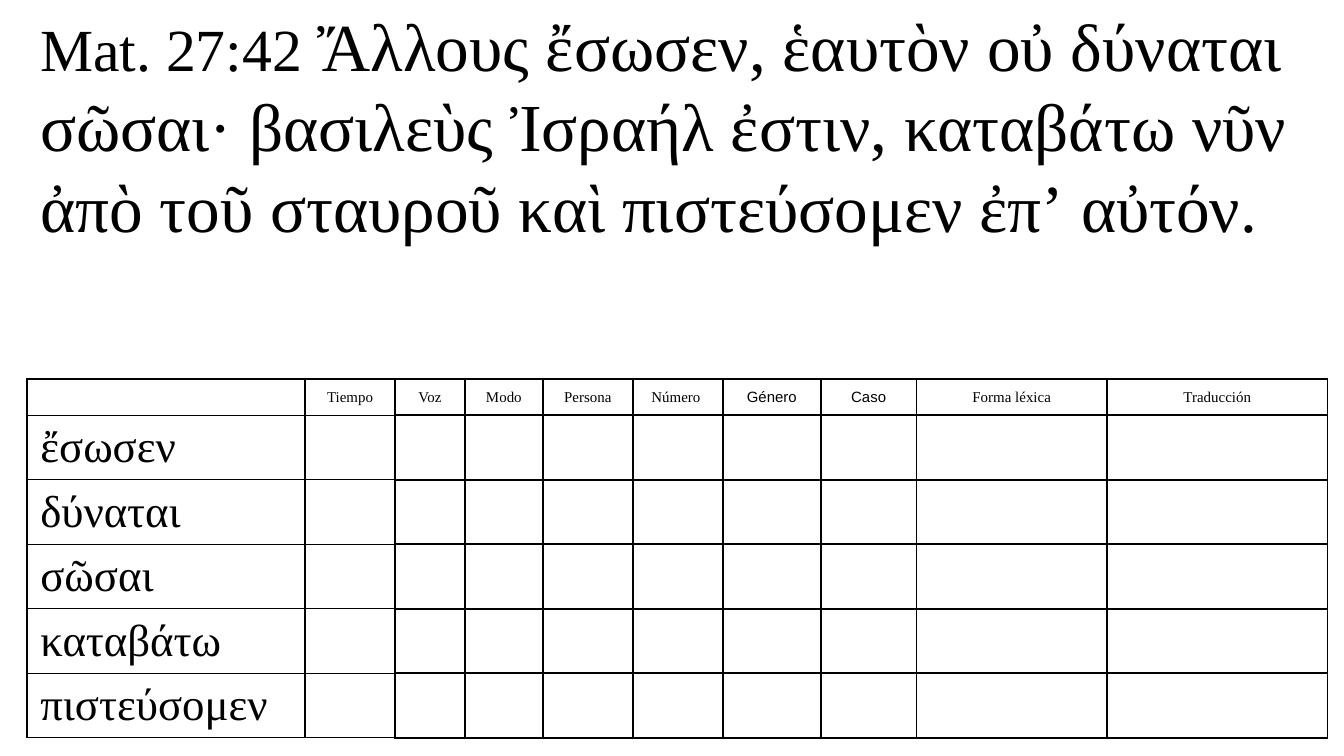
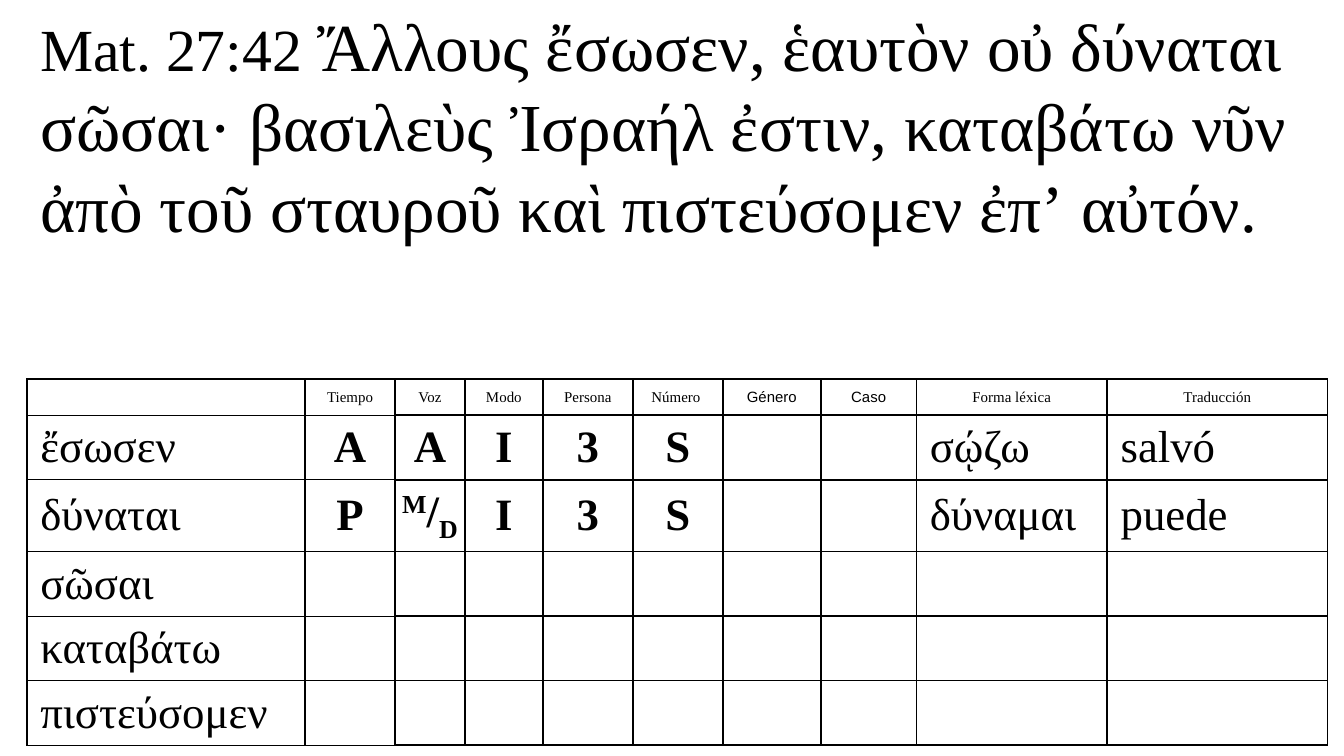
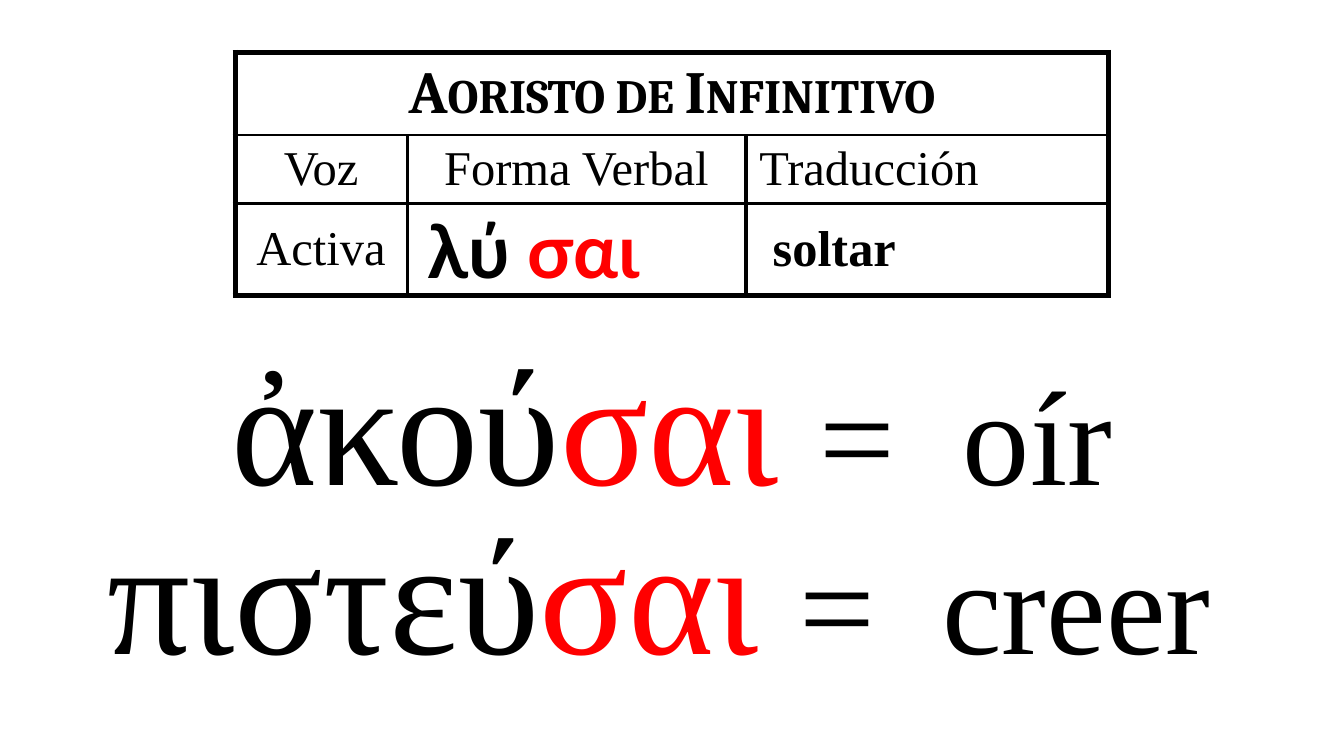
import lxml.etree
import pptx
import pptx.dml.color
import pptx.enum.text
import pptx.oxml.ns
import pptx.util

SCALE = 9144
BLACK, RED = "000000", "FF0000"
SERIF = "Times New Roman"
MID = pptx.enum.text.PP_ALIGN.CENTER
BOTH = pptx.enum.text.PP_ALIGN.JUSTIFY

VERSE = ("Ἄλλους ἔσωσεν, ἑαυτὸν οὐ δύναται σῶσαι· βασιλεὺς Ἰσραήλ ἐστιν, "
         "καταβάτω νῦν ἀπὸ τοῦ σταυροῦ καὶ πιστεύσομεν ἐπʼ αὐτόν.")
HEADS = ["Tiempo", "Voz", "Modo", "Persona", "Número ",
         "Género", "Caso", "Forma léxica", "Traducción"]
VERBS = {"ἔσωσεν": 20, "δύναται": 50, "σῶσαι": 20, "καταβάτω": 20, "πιστεύσομεν": 20}
SPLIT = [("M", {"base": 30}), ("/", {}), ("D", {"base": -25})]
KEY = {
    "ἔσωσεν": ["A", "A", "I", "3", "S", None, None, "σῴζω", "salvó"],
    "δύναται": ["P", SPLIT, "I", "3", "S", None, None, "δύναμαι", "puede"],
}


def px(count):
    return pptx.util.Emu(count * SCALE)


def hue(code):
    return pptx.dml.color.RGBColor.from_string(code)


def tag(parent, name, **attrs):
    return lxml.etree.SubElement(parent, pptx.oxml.ns.qn(name), attrs)


def write(frame, text, align=None, before=0, indent=None, **base):
    par = frame.paragraphs[0]
    props = par._p.get_or_add_pPr()
    if align is not None:
        par.alignment = align
    if indent:
        props.set("marL", str(px(indent[0])))
        props.set("indent", str(px(indent[1])))
    if before:
        tag(tag(props, "a:spcBef"), "a:spcPct", val=str(before * 1000))
    for part, extra in [(text, {})] if isinstance(text, str) else text:
        look = {"size": 24, "face": SERIF, "color": BLACK, "bold": False, **base, **extra}
        run = par.add_run()
        run.text = part
        run.font.size = pptx.util.Pt(look["size"])
        run.font.name = look["face"]
        run.font.bold = look["bold"]
        run.font.color.rgb = hue(look["color"])
        if "base" in look:
            run._r.get_or_add_rPr().set("baseline", str(look["base"] * 1000))
        if look.get("small"):
            run._r.get_or_add_rPr().set("cap", "small")


class Deck:
    def __init__(self, wide):
        self.show = pptx.Presentation()
        self.show.slide_width = px(wide)
        self.show.slide_height = px(wide) * 9 // 16
        self.slide = None

    def page(self):
        self.slide = self.show.slides.add_slide(self.show.slide_layouts[6])

    def box(self, place, text, **look):
        frame = self.slide.shapes.add_textbox(*map(px, place)).text_frame
        frame.word_wrap = True
        frame.auto_size = pptx.enum.text.MSO_AUTO_SIZE.SHAPE_TO_FIT_TEXT
        write(frame, text, **look)

    def cell(self, cell, text, pad=(10, 4), **look):
        cell.margin_left = cell.margin_right = px(pad[0])
        cell.margin_top = cell.margin_bottom = px(pad[1])
        cell.vertical_anchor = pptx.enum.text.MSO_ANCHOR.MIDDLE
        if text:
            write(cell.text_frame, text, **look)
        else:
            tag(cell.text_frame.paragraphs[0]._p, "a:endParaRPr", sz="800")

    def rule(self, cell, widths):
        props = cell._tc.get_or_add_tcPr()
        for side, width in zip("LRTB", widths):
            line = tag(props, "a:ln" + side, w=str(pptx.util.Pt(width)))
            tag(tag(line, "a:solidFill"), "a:srgbClr", val=BLACK)
        cell.fill.background()

    def table(self, left, top, cols, rows, cells, edges):
        place = map(px, (left, top, sum(cols), sum(rows)))
        table = self.slide.shapes.add_table(len(rows), len(cols), *place).table
        table.first_row = table.horz_banding = False
        for col, width in zip(table.columns, cols):
            col.width = px(width)
        for y, (height, line) in enumerate(zip(rows, cells)):
            table.rows[y].height = px(height)
            for x, (text, look) in enumerate(line):
                self.cell(table.cell(y, x), text, **look)
                self.rule(table.cell(y, x), edges(y, x))
        return table


def drill(deck, key):
    def edges(y, x):
        if x > 1:
            return 1, 1, 1, 1
        return 1, 1, 0.75 if y else 1, 0.75

    def answer(x, text, before):
        if x == 7:
            return text, {"before": before}
        if x == 8:
            return text, {}
        look = {"align": MID, "bold": True}
        return text, {**look, "pad": (0, 4)} if text is SPLIT else look

    deck.page()
    deck.box((20, -2, 961, 192), [("Mat. 27:42 ", {"size": 32}), (VERSE, {})], size=36)
    cells = [[(None, {})] + [
        (head, {"align": MID, "size": 8, "face": "Arial" if head in ("Género", "Caso") else SERIF})
        for head in HEADS]]
    for verb, before in VERBS.items():
        found = key.get(verb, [None] * len(HEADS))
        cells.append([(verb, {"before": before})]
                     + [answer(x, text, before) for x, text in enumerate(found)])
    deck.table(20, 282, [207, 67, 52, 58, 67, 67, 73, 71, 142, 164],
               [27] + [48] * 4 + [43], cells, edges)


def forms(deck):
    ups, overs = [3, 2, 2, 3], [3, 1, 2, 3]

    def edges(y, x):
        sides = (ups[x], ups[x + 1]) if y else (3, 3)
        return *sides, overs[y], overs[y + 1]

    deck.page()
    for top, stem, sense in [(234, "ἀκού", [("=  oír", {"size": 72})]),
                             (360, "πιστεύ", [("=  creer", {"size": 72}), (" ", {"size": 54})])]:
        deck.box((0, top, 1000, 158), [(stem, {}), ("σαι ", {"color": RED})] + sense,
                 size=88, align=MID, before=50)
    hang = {"indent": (38, -38), "size": 26}
    cells = [
        [("Aoristo de Infinitivo", {**hang, "align": MID, "size": 32, "face": "Cambria",
                                    "bold": True, "small": True}), (None, {}), (None, {})],
        [("Voz", {**hang, "align": MID}), ("Forma Verbal", {"align": MID, "size": 26}),
         ("Traducción", {**hang, "align": BOTH})],
        [("Activa", {**hang, "align": MID}),
         ([("λύ ", {}), ("σαι", {"color": RED})],
          {"pad": (7, 0), "indent": (8, 0), "size": 40, "face": "Lato", "bold": True}),
         ("soltar", {"indent": (10, 0), "size": 27, "bold": True})],
    ]
    table = deck.table(175, 39, [128, 252, 270], [61, 30, 68], cells, edges)
    table.cell(0, 0).merge(table.cell(0, 2))


def main():
    deck = Deck(1000)
    drill(deck, {})
    drill(deck, KEY)
    forms(deck)
    deck.show.save("out.pptx")


if __name__ == "__main__":
    main()
